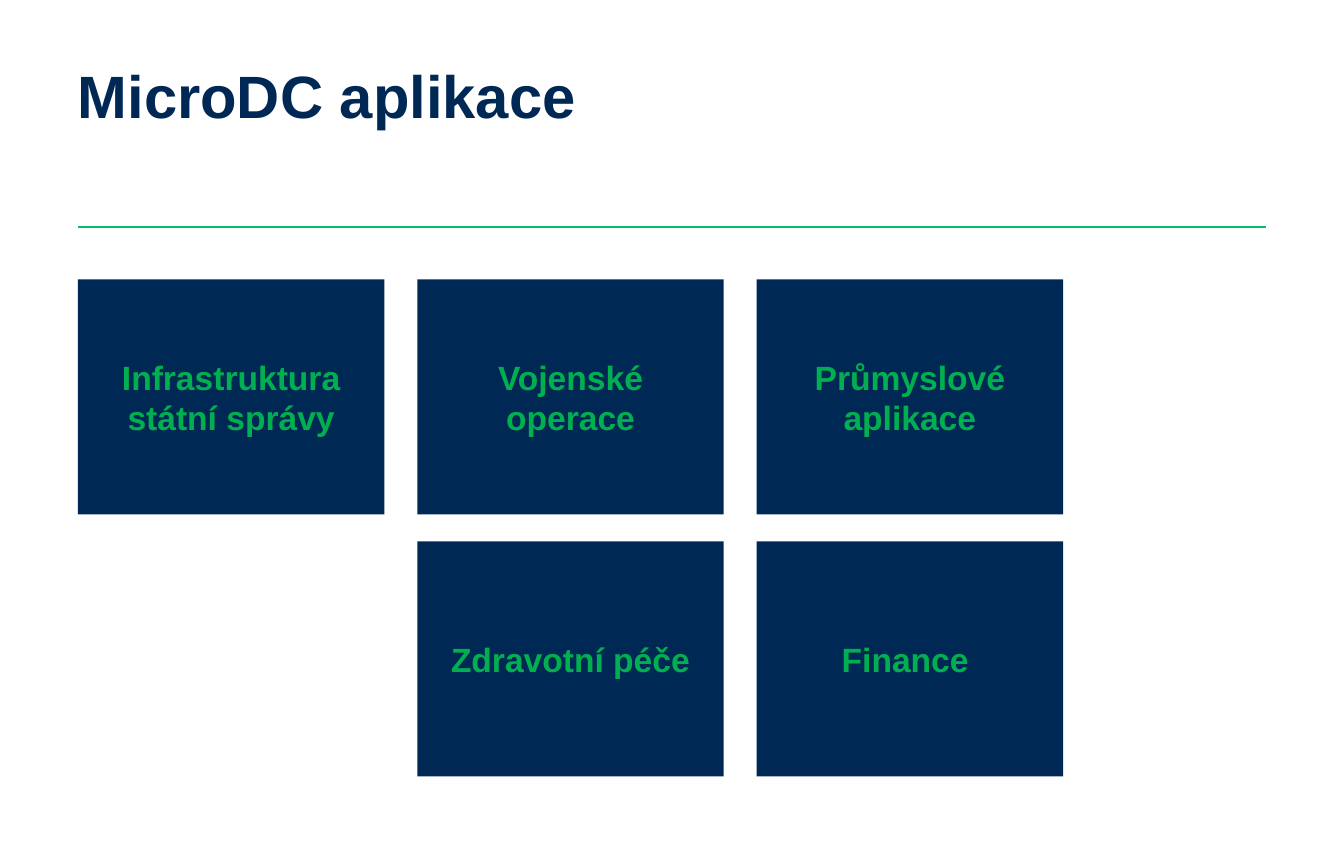
from lxml import etree
from pptx import Presentation
from pptx import util as u
from pptx.dml import color
from pptx.enum import shapes, text
from pptx.oxml import ns


def rgb(value):
    return color.RGBColor.from_string(value)


def style(p, size, value):
    for r in p.runs:
        r.font.name = "Arial"
        r.font.size = u.Pt(size)
        r.font.bold = True
        r.font.color.rgb = rgb(value)


NAVY, GREEN, RULE = "002855", "00B050", "00BF6F"
LEFT, TOP = 0.58, 2.08
COL, ROW = 2.525, 1.95
TILE_W, TILE_H = 2.28, 1.75

prs = Presentation()
prs.slide_width, prs.slide_height = u.Inches(10), u.Inches(6.26)
s = prs.slides.add_slide(prs.slide_layouts[6])

rule = s.shapes.add_connector(
    shapes.MSO_CONNECTOR.STRAIGHT,
    u.Inches(LEFT), u.Inches(1.69), u.Inches(10 - LEFT), u.Inches(1.69))
rule.line.color.rgb = rgb(RULE)
rule.line.width = u.Pt(1)
etree.SubElement(rule._element.spPr, ns.qn("a:effectLst"))

title = s.shapes.add_textbox(u.Inches(0.48), u.Inches(0.37), u.Inches(9.05), u.Inches(1.14))
tf = title.text_frame
tf.word_wrap = True
tf.text = "MicroDC aplikace"
p = tf.paragraphs[0]
p.line_spacing = u.Pt(40)
style(p, 32, NAVY)

tiles = [
    (0, 0, "Infrastruktura státní správy"),
    (1, 0, "Vojenské operace"),
    (2, 0, "Průmyslové aplikace"),
    (1, 1, "Zdravotní péče"),
    (2, 1, "Finance "),
]
for col, row, label in tiles:
    sp = s.shapes.add_shape(
        shapes.MSO_SHAPE.RECTANGLE,
        u.Inches(LEFT + col * COL), u.Inches(TOP + row * ROW),
        u.Inches(TILE_W), u.Inches(TILE_H))
    sp.shadow.inherit = False
    sp.fill.solid()
    sp.fill.fore_color.rgb = rgb(NAVY)
    sp.line.fill.background()
    tf = sp.text_frame
    tf.word_wrap = True
    tf.vertical_anchor = text.MSO_ANCHOR.MIDDLE
    tf.text = label
    p = tf.paragraphs[0]
    p.alignment = text.PP_ALIGN.CENTER
    style(p, 18, GREEN)

prs.save("out.pptx")
